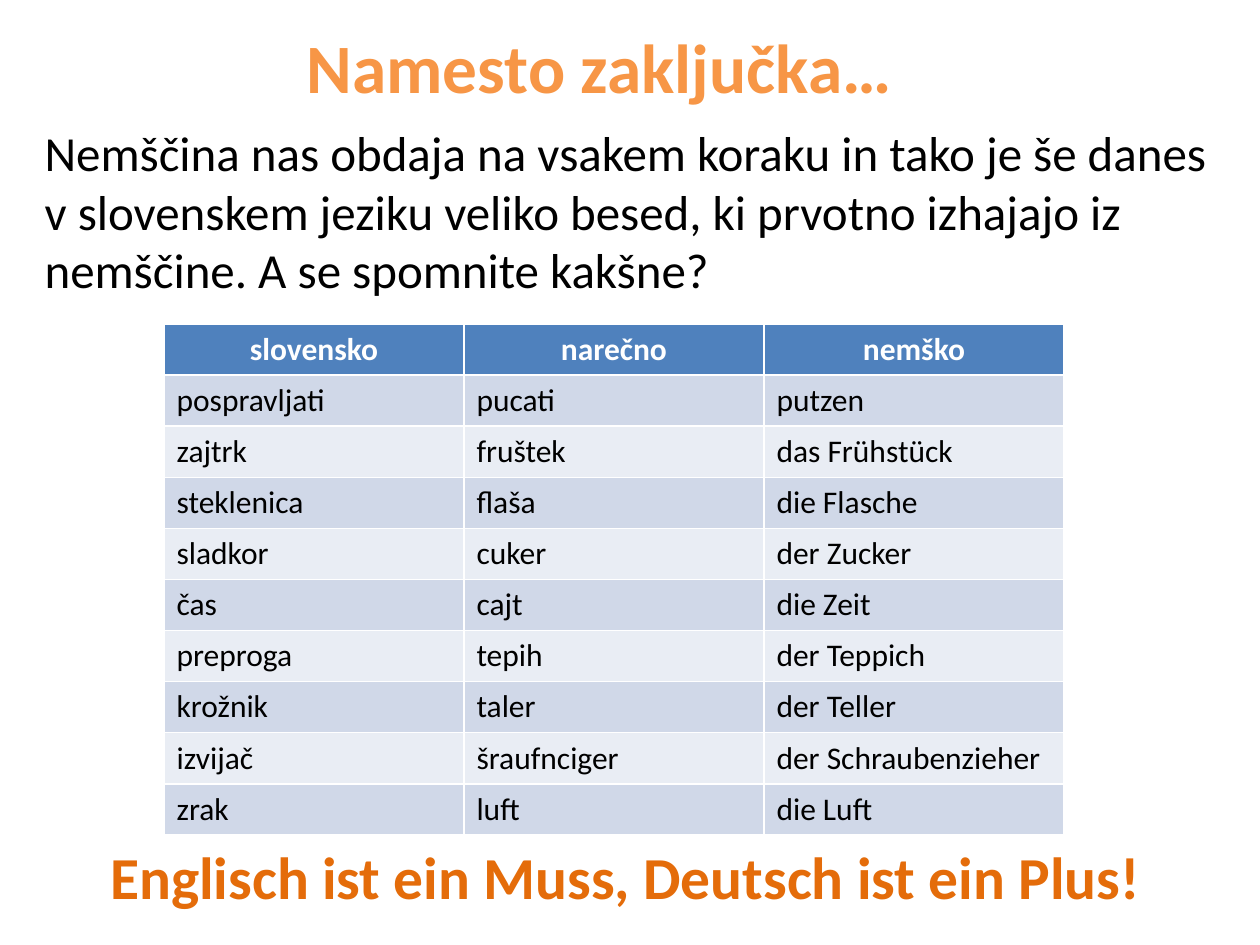
from pptx import Presentation
from pptx.dml.color import RGBColor
from pptx.enum.text import MSO_ANCHOR, MSO_AUTO_SIZE, PP_ALIGN
from pptx.util import Pt

LEFT, CENTER = PP_ALIGN.LEFT, PP_ALIGN.CENTER
TOP, MIDDLE = MSO_ANCHOR.TOP, MSO_ANCHOR.MIDDLE
NONE = MSO_AUTO_SIZE.NONE
PX = 914400 // 126

TITLE = "Namesto zaključka…"
BODY = (
    "Nemščina nas obdaja na vsakem koraku in tako je še danes "
    "v slovenskem jeziku veliko besed, ki prvotno izhajajo iz "
    "nemščine. A se spomnite kakšne?"
)
MOTTO = "Englisch ist ein Muss, Deutsch ist ein Plus!"
WORDS = [
    ("slovensko", "narečno", "nemško"),
    ("pospravljati", "pucati", "putzen"),
    ("zajtrk", "fruštek", "das Frühstück"),
    ("steklenica", "flaša", "die Flasche"),
    ("sladkor", "cuker", "der Zucker"),
    ("čas", "cajt", "die Zeit"),
    ("preproga", "tepih", "der Teppich"),
    ("krožnik", "taler", "der Teller"),
    ("izvijač", "šraufnciger", "der Schraubenzieher"),
    ("zrak", "luft", "die Luft"),
]
HEAD, BANDS = "4F81BD", ("D0D8E8", "E9EDF4")
COL, ROW = 300, 51


def paint(code):
    return RGBColor.from_string(code)


def write(frame, text, size, color, bold=False, align=LEFT):
    frame.text = text
    para = frame.paragraphs[0]
    para.alignment = align
    font = para.font
    font.name, font.size, font.bold = "Calibri", Pt(size), bold
    font.color.rgb = paint(color)


def place(shape, box, anchor):
    shape.left, shape.top, shape.width, shape.height = [n * PX for n in box]
    frame = shape.text_frame
    frame.word_wrap, frame.auto_size = True, NONE
    frame.vertical_anchor = anchor
    return frame


def build():
    """Build the closing slide with its word table."""
    deck = Presentation()
    deck.slide_width, deck.slide_height = 1260 * PX, 945 * PX
    slide = deck.slides.add_slide(deck.slide_layouts[0])
    shapes = slide.shapes

    title = place(shapes.title, (64, 26, 1071, 80), MIDDLE)
    write(title, TITLE, 39.6, "F79646", True, CENTER)
    body = place(slide.placeholders[1], (32, 116, 1205, 635), TOP)
    write(body, BODY, 28, "000000")
    motto = place(shapes.add_textbox(0, 0, 0, 0), (25, 834, 1201, 85), TOP)
    write(motto, MOTTO, 34, "E46C0A", True, CENTER)

    rows, cols = len(WORDS), len(WORDS[0])
    table = shapes.add_table(
        rows, cols, 164 * PX, 324 * PX, cols * COL * PX, rows * ROW * PX
    ).table
    for r, line in enumerate(WORDS):
        for c, word in enumerate(line):
            cell = table.cell(r, c)
            cell.fill.solid()
            cell.fill.fore_color.rgb = paint(BANDS[(r - 1) % 2] if r else HEAD)
            look = ("000000",) if r else ("FFFFFF", True, CENTER)
            write(cell.text_frame, word, 18, *look)

    deck.save("out.pptx")


if __name__ == "__main__":
    build()
